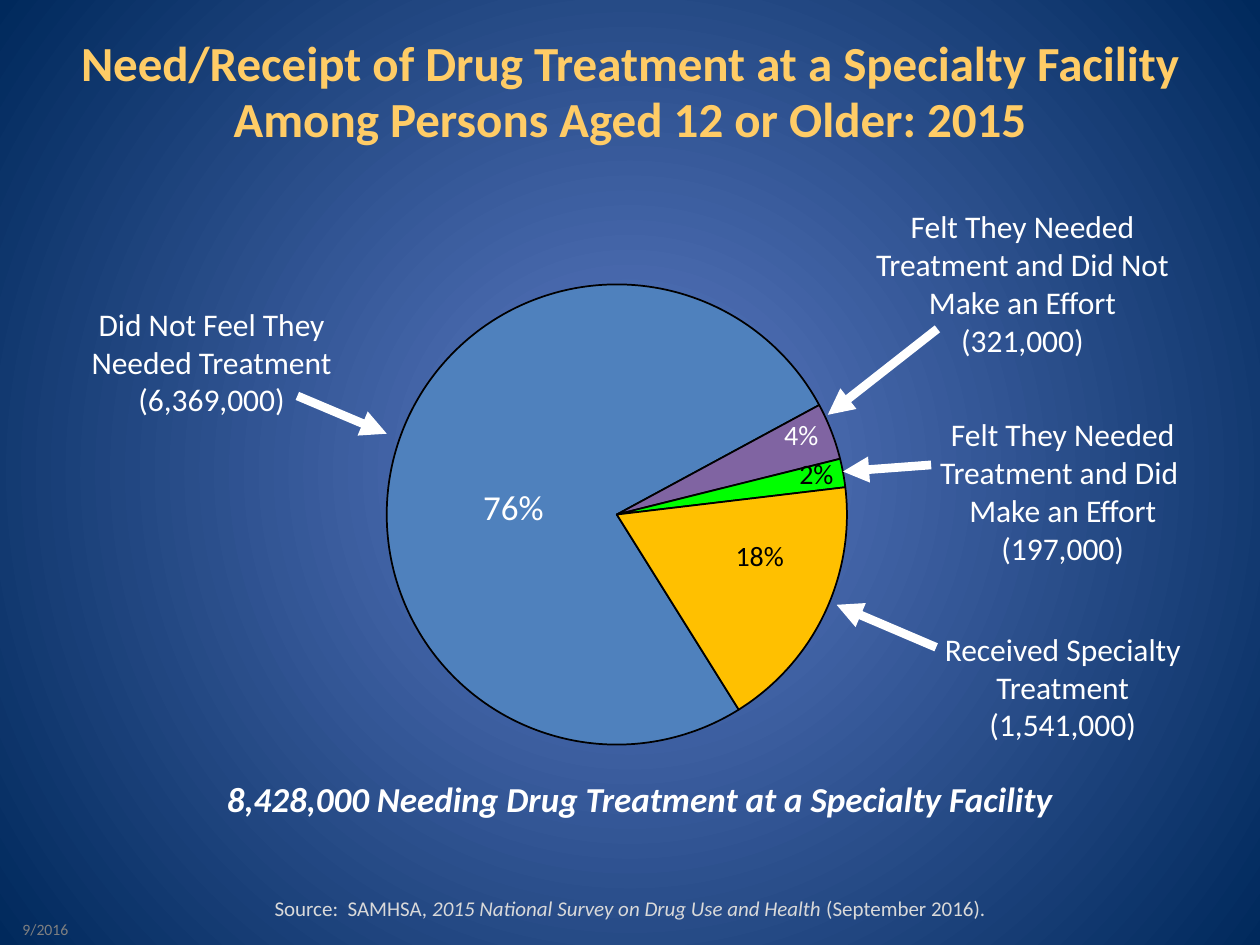
from lxml import etree
from pptx import Presentation
from pptx import util as u
from pptx.chart import data as chart_data
from pptx.dml.color import RGBColor
from pptx.enum import chart as charts, shapes, text
from pptx.oxml import parse_xml
from pptx.oxml.ns import nsdecls, qn

WIDTH, HEIGHT = u.Inches(10), u.Inches(7.5)
FONT = "Calibri"
WHITE, BLACK, GOLD = "FFFFFF", "000000", "FFCC66"

# Places are percentages of the slide: left, top, width, height
CALLOUTS = [
    ((5.6, 31.6, 22.4, 10.8), ["Did Not Feel They Needed Treatment\n(6,369,000)"]),
    ((67.4, 21.3, 27.5, 17.5),
     ["Felt They Needed Treatment and Did Not Make an Effort", "(321,000)"]),
    ((72.1, 43.3, 24.5, 17.5),
     ["Felt They Needed Treatment and Did \nMake an Effort", "(197,000)"]),
    ((72.1, 66, 24.5, 13.5), ["Received Specialty Treatment", "(1,541,000)"]),
]
ARROWS = [  # start x, y, end x, y
    (23.6, 41.9, 30.7, 45.9),
    (74.4, 34.8, 65.7, 43.9),
    (73.9, 49.2, 66.9, 49.9),
    (74.3, 68.5, 66.4, 64),
]
SLICES = [(76, "4F81BD"), (4, "8064A2"), (2, "00FF00"), (18, "FFC000")]
SHARES = [  # label, place, size, colour
    ("76%", (35, 50.7, 11.5, 5.9), 20, WHITE),
    ("4%", (59.1, 43.5, 9, 4.9), 16, WHITE),
    ("2%", (60.3, 47.6, 9, 4.9), 16, BLACK),
    ("18%", (55.8, 56.3, 9, 4.9), 16, BLACK),
]


def colour(code):
    return RGBColor.from_string(code)


def place(*percents):
    """Turn alternating x and y percentages into slide lengths."""
    return [int(share * (HEIGHT if index % 2 else WIDTH) / 100)
            for index, share in enumerate(percents)]


def add_span(para, words, size, code, bold, italic):
    for index, line in enumerate(words.split("\n")):
        if index:
            para.add_line_break()
        span = para.add_run()
        span.text = line
        font = span.font
        font.name, font.size = FONT, u.Pt(size)
        font.bold, font.italic = bold, italic
        font.color.rgb = colour(code)


def add_text(page, area, paragraphs, size, code=WHITE, bold=False, italic=False,
             align=text.PP_ALIGN.CENTER, grow=True):
    """Add a text box; a paragraph is a string or a list of (words, italic)."""
    box = page.shapes.add_textbox(*place(*area))
    frame = box.text_frame
    frame.word_wrap = True
    frame.auto_size = (text.MSO_AUTO_SIZE.SHAPE_TO_FIT_TEXT if grow
                       else text.MSO_AUTO_SIZE.NONE)
    for index, content in enumerate(paragraphs):
        para = frame.add_paragraph() if index else frame.paragraphs[0]
        para.alignment = align
        spans = [(content, italic)] if isinstance(content, str) else content
        for words, slanted in spans:
            add_span(para, words, size, code, bold, slanted)
    return frame


def add_arrow(page, ends):
    arrow = page.shapes.add_connector(shapes.MSO_CONNECTOR.STRAIGHT, *place(*ends))
    arrow.line.color.rgb = colour(WHITE)
    arrow.line.width = u.Pt(5)
    etree.SubElement(arrow.line._get_or_add_ln(), qn("a:tailEnd"), type="triangle")
    etree.SubElement(arrow._element.spPr, qn("a:effectLst"))


def add_pie(page, area):
    values = chart_data.CategoryChartData()
    values.categories = [str(number) for number in range(1, len(SLICES) + 1)]
    values.add_series("Series 1", [value for value, _ in SLICES])
    pie = page.shapes.add_chart(charts.XL_CHART_TYPE.PIE, *place(*area), values).chart
    pie.has_legend = pie.has_title = False
    pie.font.name, pie.font.size, pie.font.bold = "Times New Roman", u.Pt(18), True
    pie.font.color.rgb = colour(WHITE)
    plot = pie.plots[0]
    plot.vary_by_categories = True
    for index, (_, code) in enumerate(SLICES):
        look = plot.series[0].points[index].format
        look.fill.solid()
        look.fill.fore_color.rgb = colour(code)
        look.line.color.rgb = colour(BLACK)
        look.line.width = u.Pt(1)

    # Rotation of the first slice and inner plot area
    plot_area = pie._chartSpace.chart.plotArea
    circle = plot_area.find(qn("c:pieChart"))
    for old in circle.findall(qn("c:firstSliceAng")):
        circle.remove(old)
    etree.SubElement(circle, qn("c:firstSliceAng"), val="148")
    for old in plot_area.findall(qn("c:layout")):
        plot_area.remove(old)
    layout = etree.Element(qn("c:layout"))
    manual = etree.SubElement(layout, qn("c:manualLayout"))
    for tag, value in [("layoutTarget", "inner"), ("xMode", "edge"), ("yMode", "edge"),
                       ("x", "0.06"), ("y", "0.01"), ("w", "0.89"), ("h", "0.98")]:
        etree.SubElement(manual, qn("c:" + tag), val=value)
    plot_area.insert(0, layout)


def paint_background(page):
    fill = page.background.fill
    fill.gradient()
    for stop, code in zip(fill.gradient_stops, ["5E7CC5", "00295C"]):
        stop.color.rgb = colour(code)
    gradient = page._element.xpath(".//a:gradFill")[0]
    for linear in gradient.findall(qn("a:lin")):
        gradient.remove(linear)
    gradient.append(parse_xml(
        f'<a:path {nsdecls("a")} path="circle">'
        '<a:fillToRect l="50000" t="50000" r="50000" b="50000"/></a:path>'))


def main():
    deck = Presentation()
    deck.slide_width, deck.slide_height = WIDTH, HEIGHT
    page = deck.slides.add_slide(deck.slide_layouts[6])
    paint_background(page)

    # Title
    title = add_text(page, (0, 0, 100, 19.7),
                     ["Need/Receipt of Drug Treatment at a Specialty Facility "
                      "Among Persons Aged 12 or Older: 2015"],
                     28, GOLD, bold=True, grow=False)
    title.vertical_anchor = text.MSO_ANCHOR.MIDDLE
    title.paragraphs[0].line_spacing = 0.95

    # Pie with its shares, callouts and arrows
    add_pie(page, (27.9, 29.6, 41.7, 49.7))
    for label, area, size, code in SHARES:
        add_text(page, area, [label], size, code)
    for area, paragraphs in CALLOUTS:
        add_text(page, area, paragraphs, 18)
    for ends in ARROWS:
        add_arrow(page, ends)

    # Total, source and date
    add_text(page, (16.8, 81.6, 68, 5.9),
             ["8,428,000 Needing Drug Treatment at a Specialty Facility"],
             20, bold=True, italic=True)
    source = add_text(page, (15.6, 94.8, 68.8, 5.2),
                      [[("Source:  SAMHSA, ", False),
                        ("2015 National Survey on Drug Use and Health ", True),
                        ("(September 2016).", False)]],
                      12, "D9D9D9", grow=False)
    source.margin_left = source.margin_right = 0
    source.margin_top = source.margin_bottom = 0
    add_text(page, (0.8, 96.7, 5.8, 3.3), ["9/2016"], 9, "808080",
             align=text.PP_ALIGN.LEFT)

    deck.save("out.pptx")


if __name__ == "__main__":
    main()
